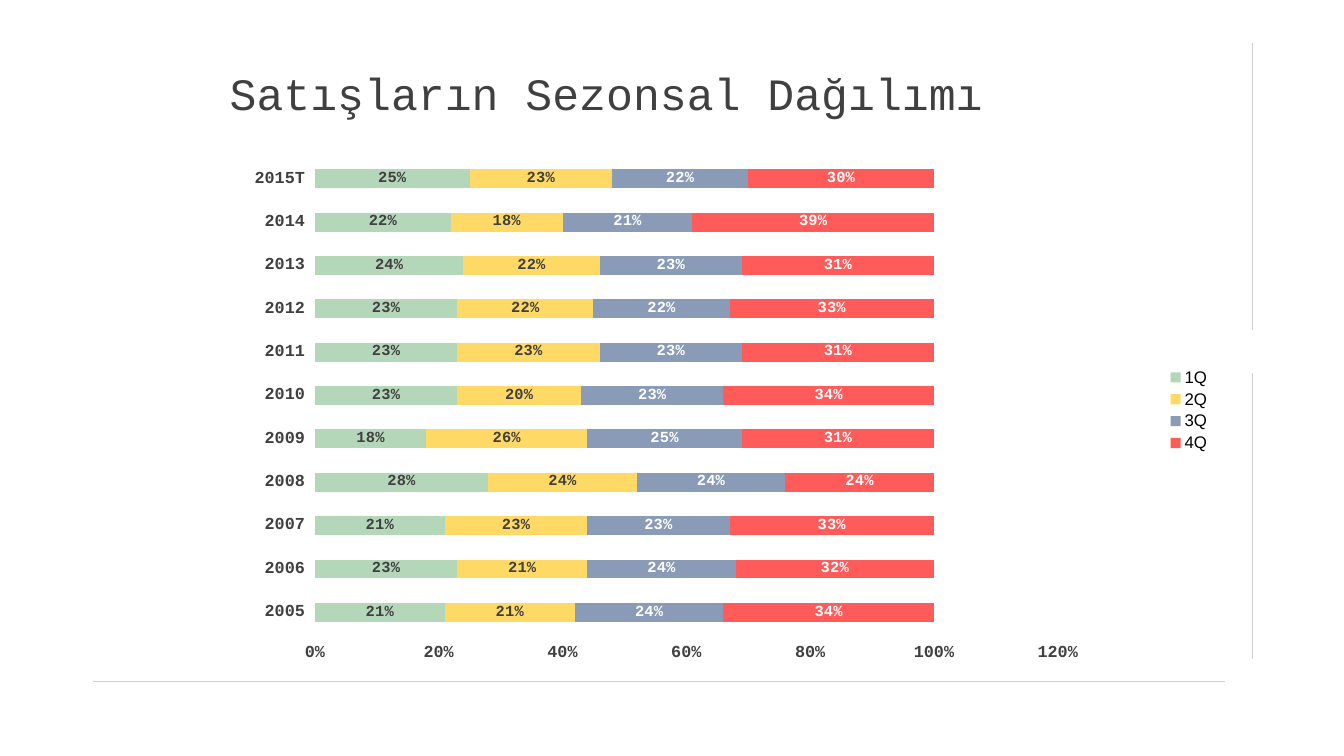
from lxml import etree
from pptx import Presentation
from pptx.chart.data import CategoryChartData
from pptx.dml.color import RGBColor
from pptx.enum.chart import XL_CHART_TYPE, XL_LABEL_POSITION, XL_LEGEND_POSITION
from pptx.enum.shapes import MSO_CONNECTOR
from pptx.oxml import parse_xml
from pptx.oxml.ns import nsdecls, qn
from pptx.util import Inches, Pt

BAR_STACKED = XL_CHART_TYPE.BAR_STACKED
RIGHT = XL_LEGEND_POSITION.RIGHT
CENTER = XL_LABEL_POSITION.CENTER
STRAIGHT = MSO_CONNECTOR.STRAIGHT

COLORS = {
    "text": "404040", "rule": "D0CECE", "white": "FFFFFF", "black": "000000",
    "1Q": "B4D6B9", "2Q": "FFD966", "3Q": "8A9BB7", "4Q": "FF5B5B",
}
MONO = "Courier New"


def rgb(name):
    return RGBColor.from_string(COLORS[name])


def set_font(font, name, size, color, bold=False):
    font.name = name
    font.size = Pt(size)
    font.bold = bold
    font.color.rgb = rgb(color)


prs = Presentation()
prs.slide_width = Inches(13.33)
prs.slide_height = Inches(7.5)
s = prs.slides.add_slide(prs.slide_layouts[6])

rules = [
    (12.42, 0.43, 12.42, 3.27, 0.25),
    (12.42, 3.7, 12.42, 6.54, 0.25),
    (0.92, 6.76, 12.15, 6.76, 0.5),
]
for x1, y1, x2, y2, width in rules:
    line = s.shapes.add_connector(STRAIGHT, Inches(x1), Inches(y1), Inches(x2), Inches(y2))
    line.line.color.rgb = rgb("rule")
    line.line.width = Pt(width)
    etree.SubElement(line._element.spPr, qn("a:effectLst"))

title = s.shapes.add_textbox(Inches(2.18), Inches(0.6), Inches(9), Inches(0.42))
tf = title.text_frame
tf.word_wrap = True
p = tf.paragraphs[0]
p.text = "Satışların Sezonsal Dağılımı"
set_font(p.font, MONO, 32, "text")

sales = {
    "1Q": [0.21, 0.23, 0.21, 0.28, 0.18, 0.23, 0.23, 0.23, 0.24, 0.22, 0.25],
    "2Q": [0.21, 0.21, 0.23, 0.24, 0.26, 0.2, 0.23, 0.22, 0.22, 0.18, 0.23],
    "3Q": [0.24, 0.24, 0.23, 0.24, 0.25, 0.23, 0.23, 0.22, 0.23, 0.21, 0.22],
    "4Q": [0.34, 0.32, 0.33, 0.24, 0.31, 0.34, 0.31, 0.33, 0.31, 0.39, 0.3],
}
data = CategoryChartData(number_format="0%")
data.categories = [str(year) for year in range(2005, 2015)] + ["2015T"]
for quarter, shares in sales.items():
    data.add_series(quarter, shares)

chart = s.shapes.add_chart(
    BAR_STACKED, Inches(2.18), Inches(1.23), Inches(9.93), Inches(5.68), data
).chart
chart.has_title = False
set_font(chart.font, "Calibri", 10, "black")
chart.has_legend = True
chart.legend.position = RIGHT
chart.legend.include_in_layout = False
set_font(chart.legend.font, "Arial", 12, "black")

for axis in (chart.category_axis, chart.value_axis):
    axis.has_major_gridlines = False
    axis.format.line.fill.background()
    set_font(axis.tick_labels.font, MONO, 12, "text", True)
values = chart.value_axis
values.minimum_scale = 0
values.maximum_scale = 1.2
values.major_unit = 0.2
values.tick_labels.number_format = "0%"
values.tick_labels.number_format_is_linked = False

plot = chart.plots[0]
plot.gap_width = 130
plot.overlap = 100
plot.vary_by_categories = False
for series in plot.series:
    series.format.fill.solid()
    series.format.fill.fore_color.rgb = rgb(series.name)
    labels = series.data_labels
    labels.show_value = True
    labels.number_format = "0%"
    labels.number_format_is_linked = False
    labels.position = CENTER
    label_color = "text" if series.name in ("1Q", "2Q") else "white"
    set_font(labels.font, MONO, 11, label_color, True)

plot_area = chart._chartSpace.chart.plotArea
for old in plot_area.findall(qn("c:layout")):
    plot_area.remove(old)
layout = parse_xml(
    f'<c:layout {nsdecls("c")}><c:manualLayout><c:layoutTarget val="inner"/>'
    '<c:xMode val="edge"/><c:yMode val="edge"/><c:x val="0.095"/><c:y val="0.058"/>'
    '<c:w val="0.742"/><c:h val="0.833"/></c:manualLayout></c:layout>'
)
plot_area.insert(0, layout)

prs.save("out.pptx")
